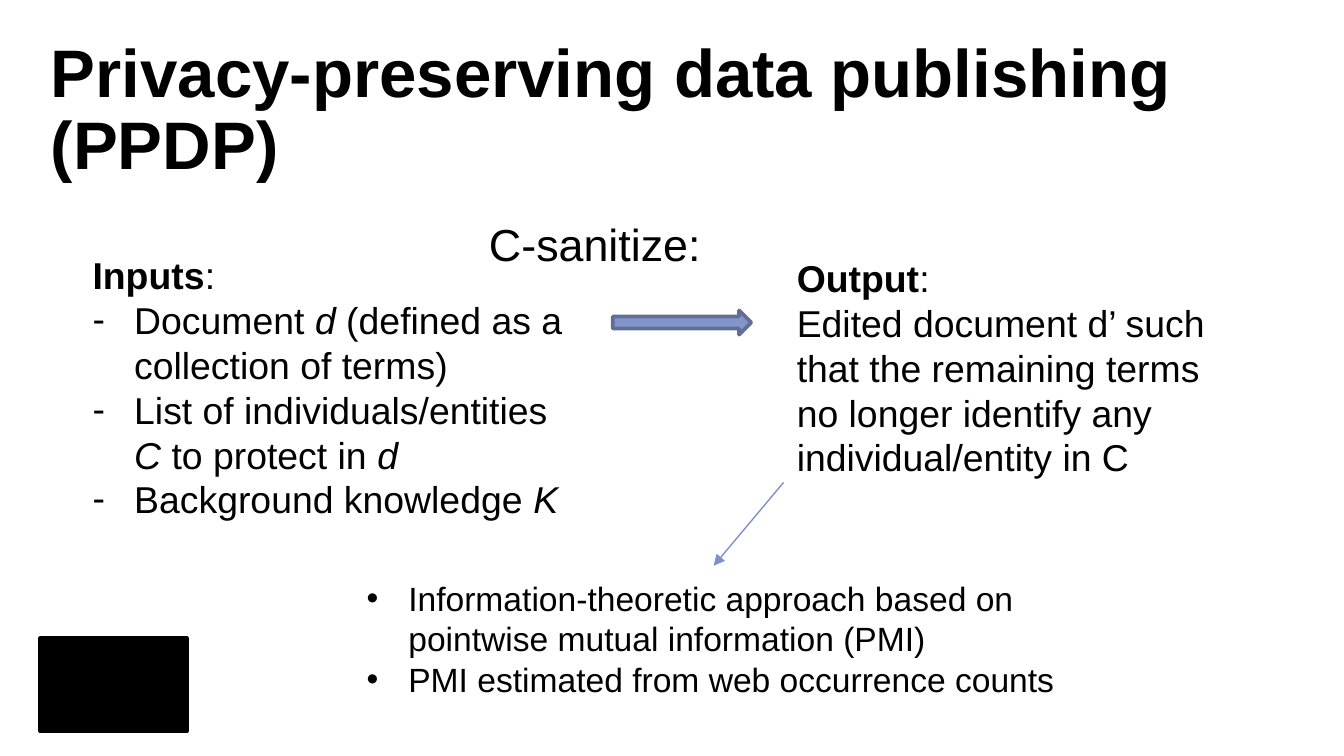
from dataclasses import dataclass

from lxml import etree
from pptx import Presentation
from pptx.dml.color import RGBColor
from pptx.enum.shapes import MSO_CONNECTOR, MSO_SHAPE
from pptx.enum.text import MSO_ANCHOR, PP_ALIGN
from pptx.oxml.ns import qn
from pptx.util import Inches, Pt

RECT = MSO_SHAPE.RECTANGLE
ARROW = MSO_SHAPE.RIGHT_ARROW
LINE = MSO_CONNECTOR.STRAIGHT
TOP, BOTTOM = MSO_ANCHOR.TOP, MSO_ANCHOR.BOTTOM
LEFT = PP_ALIGN.LEFT
WIDTH = 10
HEIGHT = WIDTH * 9 / 16


@dataclass(frozen=True)
class Theme:
    font: str = "Arial"
    ink: str = "000000"
    paper: str = "FFFFFF"
    arrow: str = "8396CC"
    edge: str = "616F97"
    link: str = "7E92C9"
    title: int = 36
    head: int = 24
    body: int = 20
    note: int = 18
    indent: float = 0.31


THEME = Theme()


def color(code):
    return RGBColor.from_string(code)


def add_box(slide, kind, box, fill, line=None):
    shape = slide.shapes.add_shape(kind, *map(Inches, box))
    shape.shadow.inherit = False
    shape.fill.solid()
    shape.fill.fore_color.rgb = color(fill)
    if line:
        shape.line.color.rgb = color(line)
        shape.line.width = Pt(2)
    else:
        shape.line.fill.background()
    return shape


def add_bullet(para, mark):
    props = para._p.get_or_add_pPr()
    props.set("marL", str(Inches(THEME.indent)))
    props.set("indent", str(-Inches(THEME.indent)))
    etree.SubElement(props, qn("a:buFont"), typeface=THEME.font)
    etree.SubElement(props, qn("a:buChar"), char=mark)


def fill_text(shape, paras, size, anchor=TOP, space=None):
    frame = shape.text_frame
    frame.word_wrap = True
    frame.vertical_anchor = anchor
    for num, (mark, runs) in enumerate(paras):
        para = frame.paragraphs[0] if num == 0 else frame.add_paragraph()
        para.alignment = LEFT
        if space:
            para.line_spacing = space
        if mark:
            add_bullet(para, mark)
        for text, style in runs:
            run = para.add_run()
            run.text = text
            font = run.font
            font.name = THEME.font
            font.size = Pt(size)
            font.color.rgb = color(THEME.ink)
            font.bold = style == "b"
            font.italic = style == "i"


def add_text(slide, box, paras, size, anchor=TOP, space=None):
    shape = slide.shapes.add_textbox(*map(Inches, box))
    fill_text(shape, paras, size, anchor, space)


def add_title(slide, box):
    runs = [("Privacy-preserving data publishing (PPDP)", "b")]
    add_text(slide, box, [(None, runs)], THEME.title, BOTTOM, 0.9)


def add_flow(slide, box):
    left, top, width, height = box
    inputs = [
        (None, [("Inputs", "b"), (":", "")]),
        ("-", [("Document ", ""), ("d", "i"),
               (" (defined as a collection of terms)", "")]),
        ("-", [("List of individuals/entities ", ""), ("C", "i"),
               (" to protect in ", ""), ("d", "i")]),
        ("-", [("Background knowledge ", ""), ("K", "i")]),
    ]
    output = [
        (None, [("Output", "b"), (":", "")]),
        (None, [("Edited document d’ such that the remaining terms "
                 "no longer identify any individual/entity in C", "")]),
    ]
    source = (left, top + 0.27, 3.82, height - 0.27)
    result = (left + width - 3.42, top + 0.29, 3.42, 1.78)
    for part, paras in ((source, inputs), (result, output)):
        shape = add_box(slide, RECT, part, THEME.paper)
        fill_text(shape, paras, THEME.body)
    add_box(slide, ARROW, (left + 3.97, top + 0.75, 1.03, 0.18),
            THEME.arrow, THEME.edge)
    add_text(slide, (left + 2.95, top, 1.94, 0.5),
             [(None, [("C-sanitize:", "")])], THEME.head)


def add_notes(slide, box):
    lines = (
        "Information-theoretic approach based on "
        "pointwise mutual information (PMI)",
        "PMI estimated from web occurrence counts",
    )
    add_text(slide, box, [("•", [(line, "")]) for line in lines], THEME.note)


def add_link(slide, start, end):
    link = slide.shapes.add_connector(LINE, *map(Inches, start + end))
    link.line.color.rgb = color(THEME.link)
    link.line.width = Pt(0.75)
    etree.SubElement(link.line._get_or_add_ln(), qn("a:tailEnd"), type="triangle")
    etree.SubElement(link._element.spPr, qn("a:effectLst"))


def main():
    deck = Presentation()
    deck.slide_width, deck.slide_height = Inches(WIDTH), Inches(HEIGHT)
    slide = deck.slides.add_slide(deck.slide_layouts[6])
    back = slide.background.fill
    back.solid()
    back.fore_color.rgb = color(THEME.ink)
    add_box(slide, RECT, (0, 0, WIDTH, HEIGHT), THEME.paper)
    add_box(slide, RECT, (0.3, 4.75, 1.09, 0.69), THEME.ink, THEME.ink)
    add_flow(slide, (0.59, 1.56, 8.66, 2.39))
    add_notes(slide, (2.63, 4.25, 5.92, 1.01))
    add_link(slide, (5.83, 3.59), (5.31, 4.21))
    add_title(slide, (0.28, 0.59, 9.29, 0.83))
    deck.save("out.pptx")


if __name__ == "__main__":
    main()
